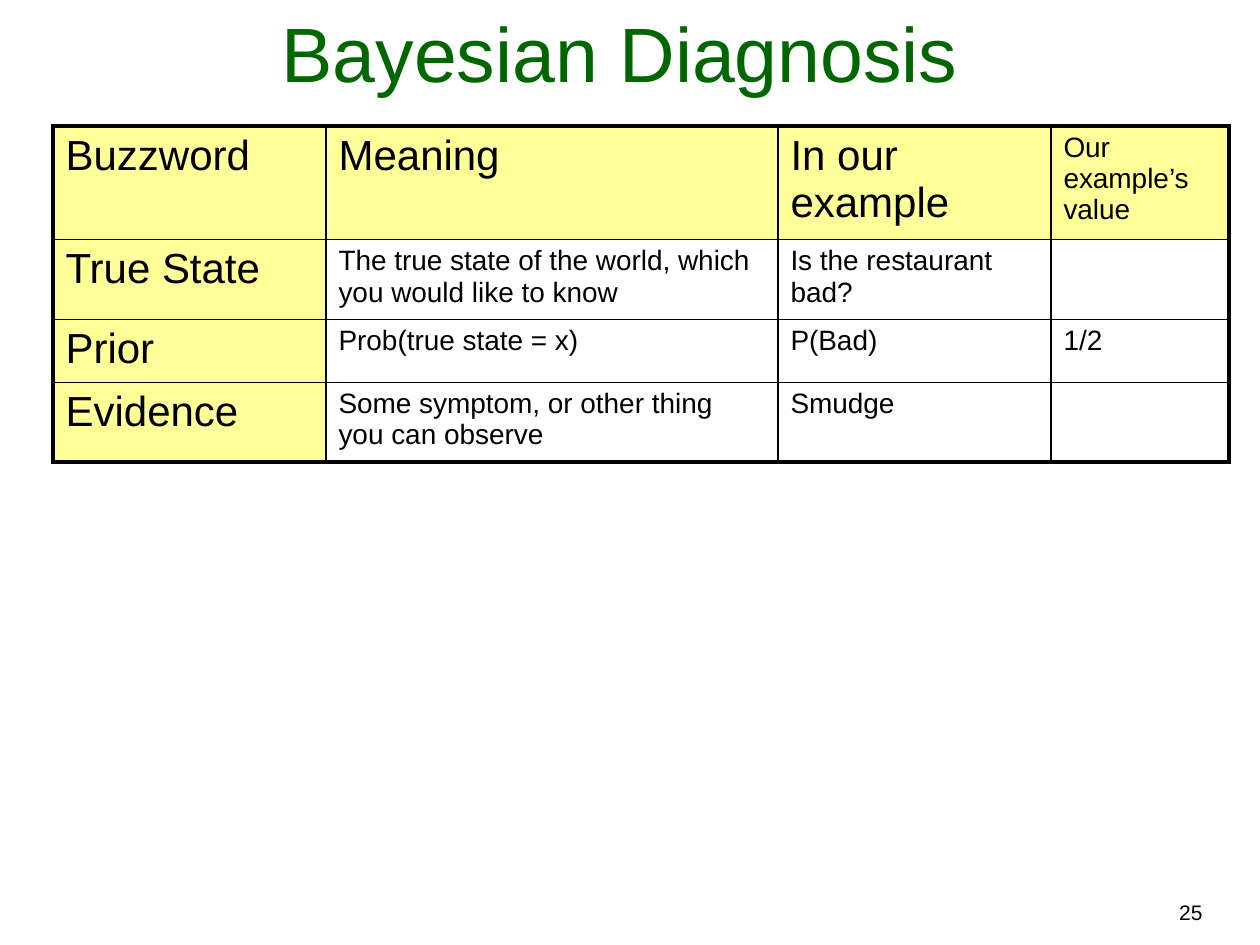
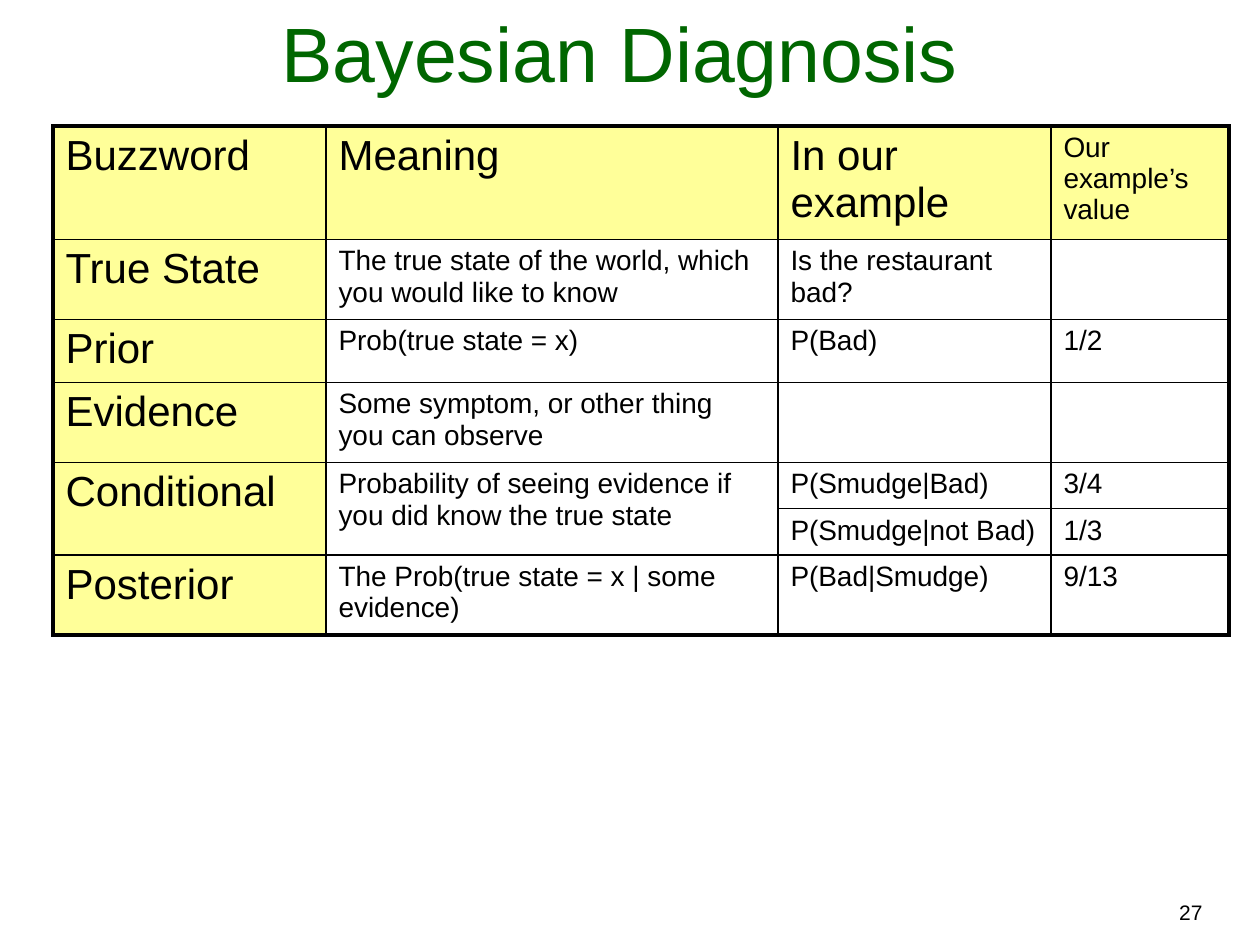
import dataclasses
import typing

import pptx
import pptx.dml.color
import pptx.enum.text
import pptx.oxml
import pptx.oxml.ns
import pptx.util

# Shared look
PX_PER_INCH = 126
FONT = "Arial"
BLACK = pptx.dml.color.RGBColor(0x00, 0x00, 0x00)
WHITE = pptx.dml.color.RGBColor(0xFF, 0xFF, 0xFF)
GREEN = pptx.dml.color.RGBColor(0x00, 0x66, 0x00)
YELLOW = pptx.dml.color.RGBColor(0xFF, 0xFF, 0x99)
LARGE, SMALL = 24, 16
OUTER_LINE, INNER_LINE = 2.25, 1
TITLE = "Bayesian Diagnosis"
TITLE_ONLY_LAYOUT = 5

TABLE_LEFT, TABLE_TOP = 53, 126
COLUMN_WIDTHS = (273, 452, 273, 178)


@dataclasses.dataclass(frozen=True)
class Row:
    """One table row; a None cell continues the cell above it."""
    height: int
    cells: tuple[typing.Optional[str], ...]


@dataclasses.dataclass(frozen=True)
class TablePage:
    number: int
    rows: tuple[Row, ...]


# Table content
HEADER = ("Buzzword", "Meaning", "In our example", "Our example’s value")
TRUE_STATE = ("True State", "The true state of the world, which you would like to know",
              "Is the restaurant bad?", "")
PRIOR = ("Prior", "Prob(true state = x)", "P(Bad)", "1/2")
EVIDENCE = ("Evidence", "Some symptom, or other thing you can observe")

PAGES = (
    TablePage(25, (
        Row(106, HEADER),
        Row(74, TRUE_STATE),
        Row(60, PRIOR),
        Row(74, EVIDENCE + ("Smudge", "")),
    )),
    TablePage(27, (
        Row(113, HEADER),
        Row(80, TRUE_STATE),
        Row(63, PRIOR),
        Row(80, EVIDENCE + ("", "")),
        Row(46, ("Conditional",
                 "Probability of seeing evidence if you did know the true state",
                 "P(Smudge|Bad)", "3/4")),
        Row(46, (None, None, "P(Smudge|not Bad)", "1/3")),
        Row(80, ("Posterior", "The Prob(true state = x | some evidence)",
                 "P(Bad|Smudge)", "9/13")),
    )),
)


def px(length: int) -> pptx.util.Emu:
    return pptx.util.Emu(round(length * 914400 / PX_PER_INCH))


def write(frame, text: str, *, size: int, color=BLACK, align="LEFT", anchor="TOP") -> None:
    """Put one formatted paragraph into a text frame."""
    frame.word_wrap = True
    frame.vertical_anchor = pptx.enum.text.MSO_ANCHOR[anchor]
    para = frame.paragraphs[0]
    para.alignment = pptx.enum.text.PP_ALIGN[align]
    span = para.add_run()
    span.text = text
    span.font.name = FONT
    span.font.size = pptx.util.Pt(size)
    span.font.color.rgb = color


def set_borders(cell, widths: dict[str, float]) -> None:
    """Draw the cell's edges, given as L, R, T, B in that order."""
    properties = cell._tc.get_or_add_tcPr()
    for side, width in widths.items():
        properties.append(pptx.oxml.parse_xml(
            f'<a:ln{side} {pptx.oxml.ns.nsdecls("a")} w="{pptx.util.Pt(width)}">'
            f'<a:solidFill><a:srgbClr val="{BLACK}"/></a:solidFill></a:ln{side}>'))


def add_title(page) -> None:
    box = page.shapes.title
    box.left, box.top, box.width, box.height = px(32), px(10), px(1176), px(94)
    box.text_frame.auto_size = pptx.enum.text.MSO_AUTO_SIZE.NONE
    write(box.text_frame, TITLE, size=44, color=GREEN, align="CENTER", anchor="BOTTOM")


def add_page_number(page, number: int) -> None:
    box = page.shapes.add_textbox(px(721), px(893), px(494), px(38))
    write(box.text_frame, str(number), size=12, align="RIGHT")


def add_buzzword_table(page, rows: tuple[Row, ...]) -> None:
    last_row, last_column = len(rows) - 1, len(COLUMN_WIDTHS) - 1
    table = page.shapes.add_table(
        len(rows), len(COLUMN_WIDTHS), px(TABLE_LEFT), px(TABLE_TOP),
        px(sum(COLUMN_WIDTHS)), px(sum(row.height for row in rows))).table
    table.first_row = table.horz_banding = False
    for column, width in zip(table.columns, COLUMN_WIDTHS):
        column.width = px(width)

    for r, row in enumerate(rows):
        table.rows[r].height = px(row.height)
        for c, text in enumerate(row.cells):
            cell = table.cell(r, c)
            outer_edges = {"L": c == 0, "R": c == last_column,
                           "T": r == 0, "B": r == last_row}
            set_borders(cell, {side: OUTER_LINE if outer else INNER_LINE
                               for side, outer in outer_edges.items()})
            cell.fill.solid()
            cell.fill.fore_color.rgb = YELLOW if r == 0 or c == 0 else WHITE
            if text is None:
                table.cell(r - 1, c).merge(cell)
            elif text:
                is_large = c == 0 or (r == 0 and c != last_column)
                write(cell.text_frame, text, size=LARGE if is_large else SMALL)


def main() -> None:
    deck = pptx.Presentation()
    deck.slide_width, deck.slide_height = px(1260), px(945)
    for content in PAGES:
        page = deck.slides.add_slide(deck.slide_layouts[TITLE_ONLY_LAYOUT])
        add_page_number(page, content.number)
        add_title(page)
        add_buzzword_table(page, content.rows)
    deck.save("out.pptx")


if __name__ == "__main__":
    main()
